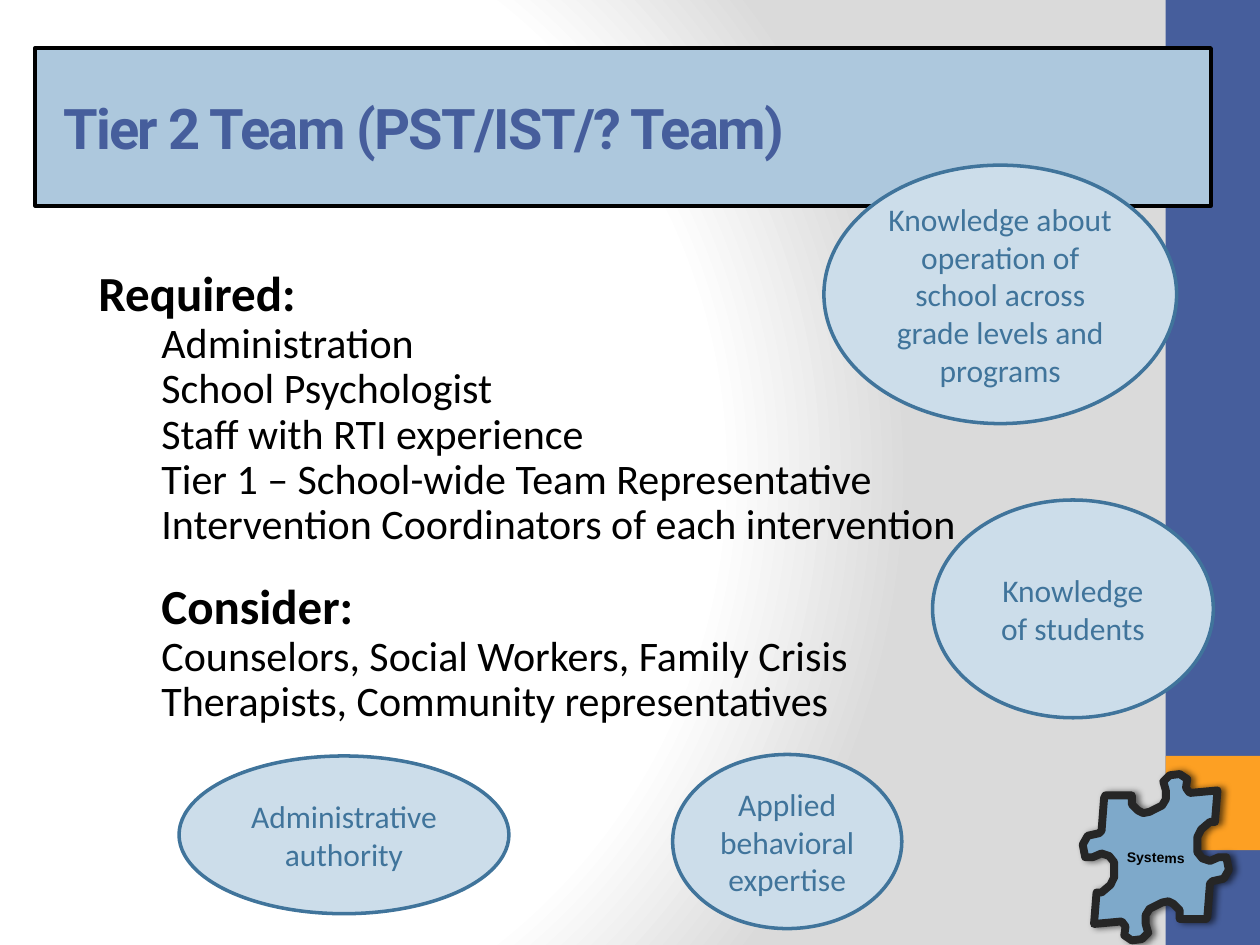
import pptx
import pptx.util
import pptx.dml.color
import pptx.enum.shapes
import pptx.enum.text
import pptx.oxml.ns
import lxml.etree
from dataclasses import dataclass

Cm, Pt = pptx.util.Cm, pptx.util.Pt
RGB = pptx.dml.color.RGBColor.from_string
SHAPE = pptx.enum.shapes.MSO_SHAPE
ALIGN = pptx.enum.text.PP_ALIGN
ANCHOR = pptx.enum.text.MSO_ANCHOR
AUTO_SIZE = pptx.enum.text.MSO_AUTO_SIZE
qn = pptx.oxml.ns.qn


@dataclass(frozen=True)
class Style:
    font: str
    size: int
    color: str
    bold: bool = False
    align: ALIGN = ALIGN.LEFT


@dataclass(frozen=True)
class Theme:
    white: str = "FFFFFF"
    gray: str = "DADADA"
    black: str = "000000"
    blue: str = "465E9C"
    orange: str = "FDA023"
    title_fill: str = "ADC8DD"
    bubble_fill: str = "CCDDEA"
    bubble_line: str = "40749B"
    puzzle_fill: str = "7EA9CA"
    puzzle_line: str = "262626"
    title: Style = Style("Roboto", 32, "465E9C", bold=True)
    heading: Style = Style("Calibri", 28, "000000", bold=True)
    item: Style = Style("Calibri", 24, "000000")
    bubble: Style = Style("Calibri", 18, "40749B", align=ALIGN.CENTER)
    label: Style = Style("Arial", 8, "000000", bold=True, align=ALIGN.CENTER)


THEME = Theme()

# Content
TITLE = "Tier 2 Team (PST/IST/? Team)"
REQUIRED = [
    "Administration",
    "School Psychologist",
    "Staff with RTI experience",
    "Tier 1 – School-wide Team Representative",
    "Intervention Coordinators of each intervention",
]
CONSIDER = ["Counselors, Social Workers, Family Crisis Therapists, "
            "Community representatives"]
PUZZLE_LABEL = "Systems"
# Each bubble: text and its box
BUBBLES = [
    ("Applied behavioral expertise", (13.56, 15.21, 4.62, 3.51)),
    ("Knowledge of students", (18.8, 10.08, 5.66, 4.39)),
    ("Knowledge about operation of school across grade levels and programs",
     (16.61, 3.33, 7.11, 5.21)),
    ("Administrative authority", (3.61, 15.24, 6.65, 3.18)),
]

# Layout in centimetres; boxes are left, top, width, height
SLIDE_WIDTH, SLIDE_HEIGHT = 25.4, 19.05
BAR_WIDTH = 1.9
BAR_LEFT = SLIDE_WIDTH - BAR_WIDTH
SIDE_BARS = [
    (THEME.blue, (BAR_LEFT, 0, BAR_WIDTH, SLIDE_HEIGHT)),
    (THEME.orange, (BAR_LEFT, 0.8 * SLIDE_HEIGHT, BAR_WIDTH, BAR_WIDTH)),
]
TITLE_BOX = (0.71, 0.97, 23.7, 3.18)
TITLE_INDENT = 0.31
BODY_BOX = (1.73, 5.3, 19.43, 9.58)
ITEM_INDENT = 1.27
LABEL_BOX = (22.45, 16.99, 1.7, 0.61)

# Body sections: heading, its indent, space before in points, items
SECTIONS = [
    ("Required:", 0, 0, REQUIRED),
    ("Consider:", ITEM_INDENT, 19, CONSIDER),
]

# Puzzle piece: offsets from its centre in hundredths of an inch.
# Each side is a corner, a socket and a knob; the other two sides mirror these.
PUZZLE_CENTER = (23.3, 17.28)
PUZZLE_UNIT = pptx.util.Inches(1) / 100
RIGHT_CORNER, BOTTOM_CORNER = [(49, -53)], [(41, 47), (40, 49)]
RIGHT_SOCKET = [(47, -28), (43, -28), (36, -22), (33, -16), (33, -4), (37, 1), (43, 3)]
RIGHT_KNOB = [(50, 0), (56, 0), (58, 10), (54, 17), (45, 19), (43, 21)]
BOTTOM_SOCKET = [(19, 49), (19, 42), (14, 37), (10, 35), (5, 36), (-5, 41), (-8, 46)]
BOTTOM_KNOB = [(-8, 53), (-6, 60), (-11, 65), (-19, 66), (-25, 62), (-24, 55), (-27, 51)]


def add_xml(parent, tag, **attributes):
    values = {name: str(value) for name, value in attributes.items()}
    return lxml.etree.SubElement(parent, qn(tag), values)


def place(shape, box):
    shape.left, shape.top, shape.width, shape.height = map(Cm, box)


def paint(shape, fill, line=None, width=0):
    shape.shadow.inherit = False
    shape.fill.solid()
    shape.fill.fore_color.rgb = RGB(fill)
    if line:
        shape.line.color.rgb = RGB(line)
        shape.line.width = Pt(width)
    else:
        shape.line.fill.background()


def write(paragraph, text, style):
    paragraph.alignment = style.align
    run = paragraph.add_run()
    run.text = text
    run.font.name = style.font
    run.font.size = Pt(style.size)
    run.font.bold = style.bold
    run.font.color.rgb = RGB(style.color)
    return run


def indent_without_bullet(paragraph, left):
    properties = paragraph._p.get_or_add_pPr()
    properties.set("marL", str(Cm(left)))
    properties.set("indent", "0")
    add_xml(properties, "a:buNone")


def draw_background(slide):
    slide.background.fill.gradient()
    gradient = slide.element.find(".//" + qn("a:gradFill"))
    gradient.clear()
    stops = add_xml(gradient, "a:gsLst")
    for percent, color in [(0, THEME.white), (75, THEME.white), (100, THEME.gray)]:
        stop = add_xml(stops, "a:gs", pos=percent * 1000)
        add_xml(stop, "a:srgbClr", val=color)
    circle = add_xml(gradient, "a:path", path="circle")
    add_xml(circle, "a:fillToRect", l=20000, t=50000, r=100000, b=50000)


def draw_side_bars(shapes):
    first_position = 2  # behind the placeholders
    for position, (color, box) in enumerate(SIDE_BARS, first_position):
        bar = shapes.add_shape(SHAPE.RECTANGLE, *map(Cm, box))
        paint(bar, color)
        shapes.element.insert(position, bar.element)


def fill_title(title):
    place(title, TITLE_BOX)
    paint(title, THEME.title_fill, THEME.black, 2.25)
    frame = title.text_frame
    frame.auto_size = AUTO_SIZE.NONE
    frame.vertical_anchor = ANCHOR.MIDDLE
    run = write(frame.paragraphs[0], TITLE, THEME.title)
    run.font._element.set("spc", "-100")
    indent_without_bullet(frame.paragraphs[0], TITLE_INDENT)


def draw_puzzle(shapes):
    half = RIGHT_CORNER + RIGHT_SOCKET + RIGHT_KNOB
    half += BOTTOM_CORNER + BOTTOM_SOCKET + BOTTOM_KNOB
    outline = half + [(-x, -y) for x, y in half]
    builder = shapes.build_freeform(*outline[0], scale=PUZZLE_UNIT)
    builder.add_line_segments(outline[1:], close=True)
    puzzle = builder.convert_to_shape(*map(Cm, PUZZLE_CENTER))
    paint(puzzle, THEME.puzzle_fill, THEME.puzzle_line, 4.5)
    effects = puzzle.element.spPr.find(qn("a:effectLst"))
    shadow = add_xml(effects, "a:outerShdw", blurRad=Pt(4), dist=Pt(2), dir=0)
    color = add_xml(shadow, "a:srgbClr", val=THEME.black)
    add_xml(color, "a:alpha", val=60000)

    label = shapes.add_textbox(*map(Cm, LABEL_BOX))
    label.rotation = 0.8
    label.text_frame.word_wrap = False
    write(label.text_frame.paragraphs[0], PUZZLE_LABEL, THEME.label)


def fill_body(body):
    place(body, BODY_BOX)
    frame = body.text_frame
    frame.auto_size = AUTO_SIZE.NONE
    lines = []
    for heading, left, space, items in SECTIONS:
        lines.append((heading, THEME.heading, left, space))
        lines += [(item, THEME.item, ITEM_INDENT, 0) for item in items]
    for number, (text, style, left, space) in enumerate(lines):
        paragraph = frame.add_paragraph() if number else frame.paragraphs[0]
        paragraph.line_spacing = 0.9
        paragraph.space_before = Pt(space)
        indent_without_bullet(paragraph, left)
        write(paragraph, text, style)


def draw_bubbles(shapes):
    for text, box in BUBBLES:
        bubble = shapes.add_shape(SHAPE.OVAL, *map(Cm, box))
        paint(bubble, THEME.bubble_fill, THEME.bubble_line, 2)
        bubble.text_frame.word_wrap = True
        bubble.text_frame.vertical_anchor = ANCHOR.MIDDLE
        write(bubble.text_frame.paragraphs[0], text, THEME.bubble)


presentation = pptx.Presentation()
presentation.slide_width, presentation.slide_height = Cm(SLIDE_WIDTH), Cm(SLIDE_HEIGHT)
slide = presentation.slides.add_slide(presentation.slide_layouts[1])
draw_background(slide)
draw_side_bars(slide.shapes)
fill_title(slide.shapes.title)
draw_puzzle(slide.shapes)
fill_body(slide.placeholders[1])
draw_bubbles(slide.shapes)
presentation.save("out.pptx")
